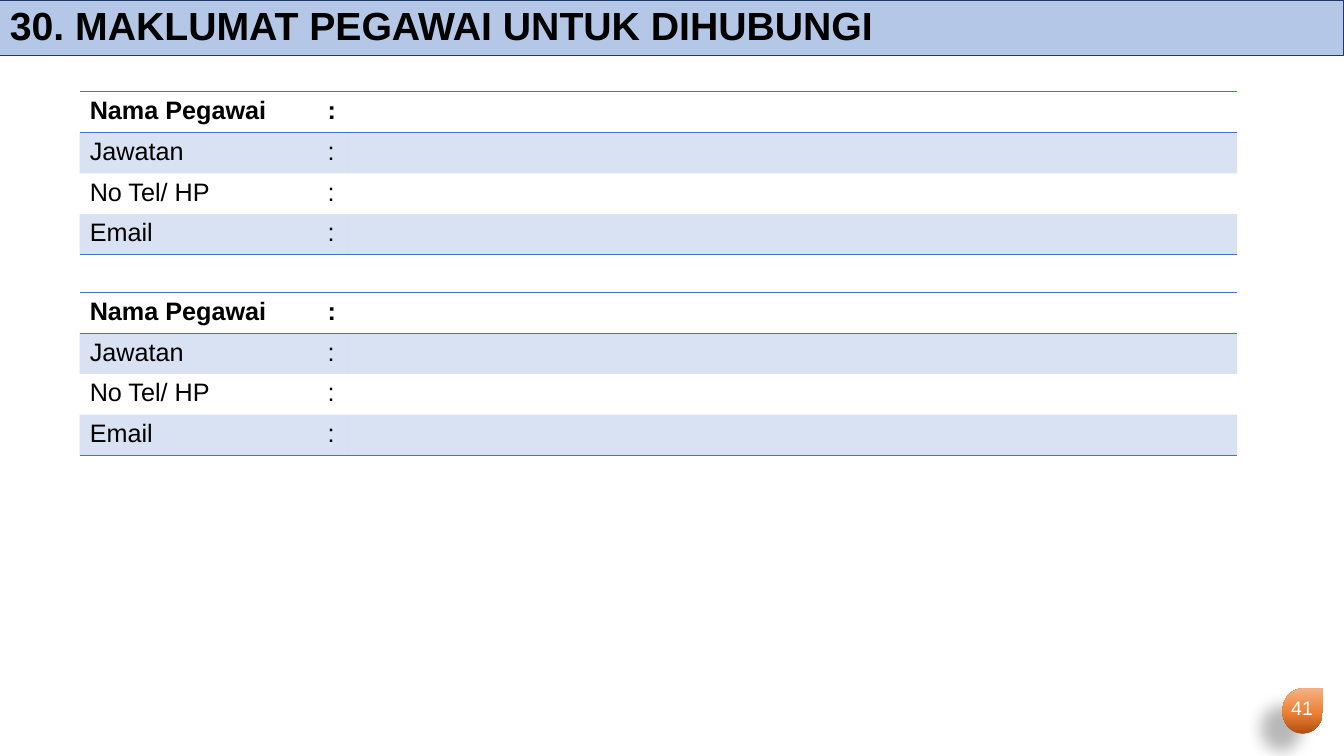
from lxml import etree
from pptx import Presentation
from pptx.dml.color import RGBColor
from pptx.enum.shapes import MSO_SHAPE
from pptx.enum.text import MSO_ANCHOR, PP_ALIGN
from pptx.oxml.ns import qn
from pptx.util import Inches, Pt

RECT, TEAR = MSO_SHAPE.RECTANGLE, MSO_SHAPE.TEAR
LEFT, CENTER = PP_ALIGN.LEFT, PP_ALIGN.CENTER
TOP, MIDDLE = MSO_ANCHOR.TOP, MSO_ANCHOR.MIDDLE
COLORS = {
    "black": "000000", "white": "FFFFFF", "bar": "B4C7E7", "navy": "203864",
    "blue": "4472C4", "rust": "B0500F", "orange": "EE8137", "peach": "F4B183",
}
NO_STYLE = "{2D5ABB26-0587-4C30-8999-92F81FD0307C}"
FIELDS = ["Nama Pegawai", "Jawatan", "No Tel/ HP", "Email"]
COLUMNS = [2.36, 0.3, 8.82]


def add_xml(parent, tag, **attrs):
    return etree.SubElement(parent, qn(tag), {k: str(v) for k, v in attrs.items()})


class SlideBuilder:
    font = "Arial"

    def __init__(self, prs):
        self.s = prs.slides.add_slide(prs.slide_layouts[6])

    def color(self, name):
        return RGBColor.from_string(COLORS[name])

    def set_text(self, tf, text, size, color="black", bold=False, align=LEFT):
        p = tf.paragraphs[0]
        p.text = text
        p.alignment = align
        p.font.name = self.font
        p.font.size = Pt(size)
        p.font.bold = bold
        p.font.color.rgb = self.color(color)
        return p

    def shape(self, kind, x, y, w, h):
        sp = self.s.shapes.add_shape(kind, Inches(x), Inches(y), Inches(w), Inches(h))
        sp.shadow.inherit = False
        return sp

    def title_bar(self, text):
        sp = self.shape(RECT, 0, 0, 13.33, 0.55)
        sp.fill.solid()
        sp.fill.fore_color.rgb = self.color("bar")
        sp.line.color.rgb = self.color("navy")
        sp.line.width = Pt(0.75)
        tf = sp.text_frame
        tf.word_wrap = True
        tf.vertical_anchor = MIDDLE
        self.set_text(tf, text, 28, bold=True).line_spacing = 0.9

    def page_badge(self, number):
        sp = self.shape(TEAR, 12.72, 6.83, 0.4, 0.45)
        sp.line.fill.background()
        sp.fill.gradient()
        sp.fill.gradient_angle = 90
        spPr = sp._element.spPr
        stops = spPr.find(".//" + qn("a:gsLst"))
        for stop in list(stops):
            stops.remove(stop)
        for pos, name in [(0, "rust"), (48, "orange"), (100, "peach")]:
            stop = add_xml(stops, "a:gs", pos=pos * 1000)
            add_xml(stop, "a:srgbClr", val=COLORS[name])
        shadow = add_xml(spPr.find(qn("a:effectLst")), "a:outerShdw",
                         blurRad=Pt(11.8), dist=Pt(19.7), dir=141 * 60000, rotWithShape=0)
        add_xml(add_xml(shadow, "a:srgbClr", val=COLORS["black"]), "a:alpha", val=28000)

        box = self.s.shapes.add_textbox(Inches(12.67), Inches(6.86), Inches(0.49), Inches(0.4))
        tf = box.text_frame
        tf.word_wrap = True
        tf.vertical_anchor = TOP
        self.set_text(tf, number, 14, "white", align=CENTER)

    def border(self, cell, side):
        ln = add_xml(cell._tc.get_or_add_tcPr(), "a:ln" + side, w=Pt(1))
        add_xml(add_xml(ln, "a:solidFill"), "a:srgbClr", val=COLORS["blue"])

    def shade(self, cell, banded):
        if not banded:
            cell.fill.background()
            return
        cell.fill.solid()
        cell.fill.fore_color.rgb = self.color("blue")
        clr = cell._tc.tcPr.find(qn("a:solidFill"))[0]
        add_xml(clr, "a:alpha", val=20000)

    def contact_table(self, y):
        frame = self.s.shapes.add_table(len(FIELDS), len(COLUMNS), Inches(0.79), Inches(y),
                                        Inches(sum(COLUMNS)), Inches(1.62))
        table = frame.table
        table.horz_banding = False
        table._tbl.tblPr.find(qn("a:tableStyleId")).text = NO_STYLE
        for col, width in zip(table.columns, COLUMNS):
            col.width = Inches(width)
        for i, field in enumerate(FIELDS):
            for j, text in enumerate([field, ":", ""]):
                cell = table.cell(i, j)
                self.set_text(cell.text_frame, text, 18, bold=i == 0)
                if i == 0:
                    self.border(cell, "T")
                if i in (0, len(FIELDS) - 1):
                    self.border(cell, "B")
                self.shade(cell, i % 2 == 1)


def main():
    prs = Presentation()
    prs.slide_width, prs.slide_height = Inches(13.33), Inches(7.5)
    slide = SlideBuilder(prs)
    slide.page_badge("41")
    slide.title_bar("30. MAKLUMAT PEGAWAI UNTUK DIHUBUNGI")
    for y in (2.9, 0.91):
        slide.contact_table(y)
    prs.save("out.pptx")


if __name__ == "__main__":
    main()
